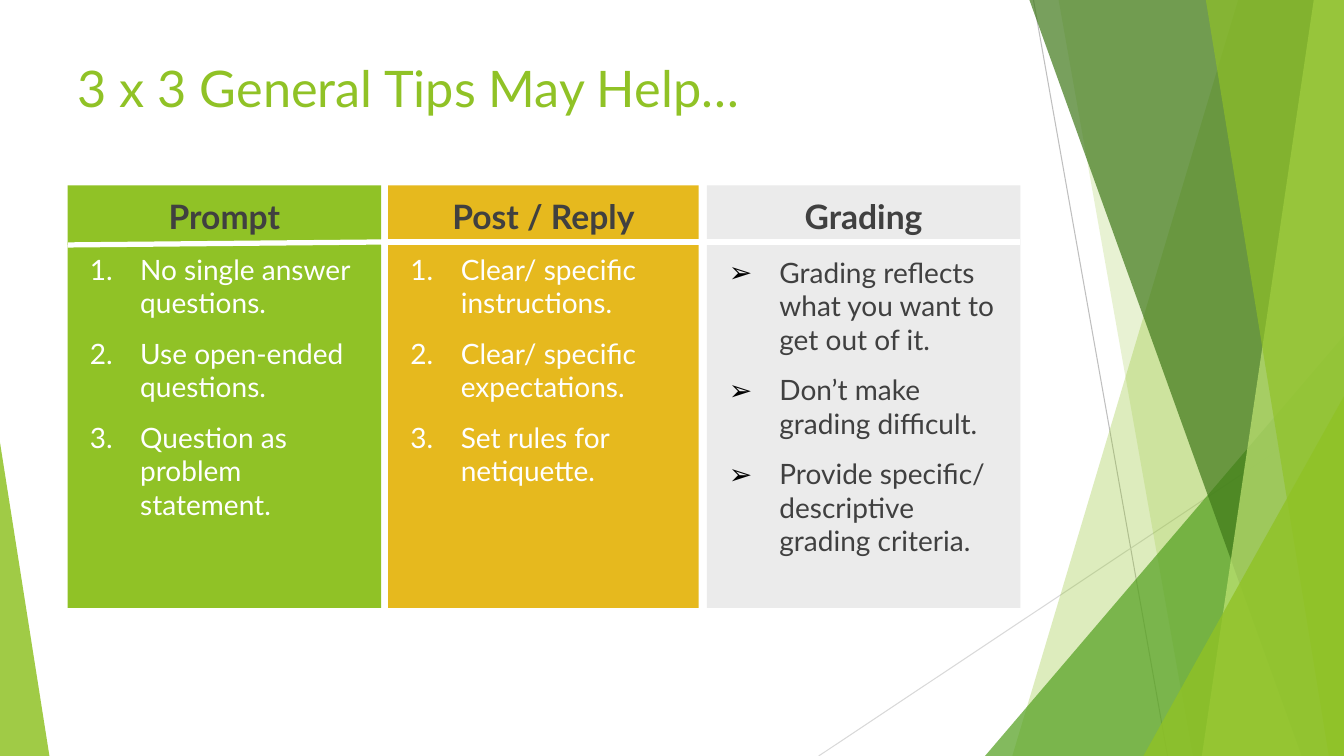
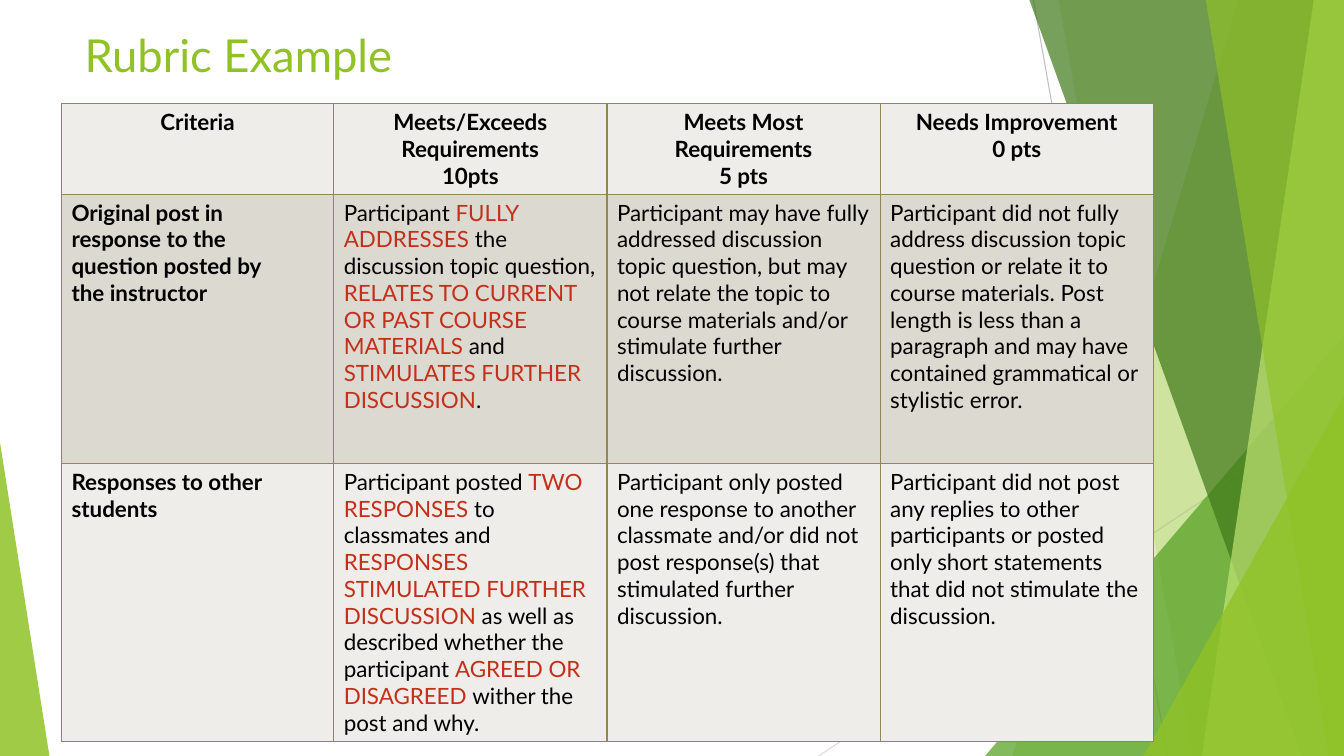
"""Build two slides: general discussion tips and a rubric example."""
from dataclasses import dataclass

from lxml.etree import SubElement
from pptx import Presentation
from pptx.dml.color import RGBColor
from pptx.enum.shapes import MSO_CONNECTOR as Connector, MSO_SHAPE as Preset
from pptx.enum.text import MSO_ANCHOR as Anchor, MSO_AUTO_SIZE as AutoSize, PP_ALIGN as Align
from pptx.oxml.ns import qn
from pptx.util import Inches, Pt

FONT = "Lato"
WIDTH, HEIGHT = 13.33, 7.5
COLORS = {
    "lime": "90C226", "leaf": "54A021", "forest": "3F7819", "pale": "C0E474",
    "gold": "E6B91E", "mist": "EBEBEB", "ink": "404040", "black": "000000",
    "white": "FFFFFF", "silver": "BFBFBF", "cloud": "D9D9D9", "red": "C42F1A",
    "light_row": "EEEDE9", "dark_row": "DCD9D1", "border": "918655",
}


@dataclass(frozen=True)
class Rule:
    start: tuple[float, float]
    end: tuple[float, float]
    color: str
    points: float


@dataclass(frozen=True)
class Band:
    top_x: float
    bottom_x: float
    color: str
    opacity: int


@dataclass(frozen=True)
class Wedge:
    left: float
    top: float
    width: float
    apex: float
    color: str
    opacity: int


@dataclass(frozen=True)
class Column:
    left: float
    width: float
    list_top: float
    heading: str
    fill: str
    text: str
    bullet: str
    bullet_color: str
    tips: tuple[str, ...]


BACKDROP_RULES = (
    Rule((10.25, 0), (11.58, HEIGHT), "silver", 0.75),
    Rule((WIDTH, 4.03), (8.12, HEIGHT), "cloud", 0.75),
)
BACKDROP_FACETS = (
    Band(12.28, 10.04, "lime", 30),
    Band(10.5, 11.83, "lime", 20),
    Wedge(9.77, 3.33, 3.56, 1, "leaf", 72),
    Band(10.21, 12.91, "forest", 70),
    Band(13.03, 11.92, "pale", 70),
    Band(11.96, 13.18, "lime", 65),
    Wedge(11.34, 3.93, 1.99, 1, "lime", 80),
    Wedge(0, 4.39, 0.49, 0, "lime", 85),
)
COLUMNS = (
    Column(0.67, 3.11, 2.4, "Prompt", "lime", "white", "", "white", (
        "No single answer questions.",
        "Use open-ended questions.",
        "Question as problem statement.")),
    Column(3.85, 3.08, 2.4, "Post / Reply", "gold", "white", "", "white", (
        "Clear/ specific instructions.",
        "Clear/ specific expectations.",
        "Set rules for netiquette.")),
    Column(7.01, 3.11, 2.43, "Grading", "mist", "ink", "➢", "black", (
        "Grading reflects what you want to get out of it.",
        "Don’t make grading difficult.",
        "Provide specific/ descriptive grading criteria.")),
)
HEADING_TOP, HEADING_HEIGHT, LIST_BOTTOM = 1.84, 0.59, 6.03
DIVIDERS = (
    Rule((0.67, 2.43), (3.85, 2.4), "white", 3.75),
    Rule((3.78, 2.4), (7.19, 2.4), "white", 3.75),
    Rule((7.19, 2.4), (10.12, 2.4), "white", 3.75),
)
RUBRIC_WIDTHS = (2.7, 2.71, 2.71, 2.71)
RUBRIC_HEIGHTS = (0.89, 2.67, 2.76)
RUBRIC = (
    (("Criteria",),
     ("Meets/Exceeds Requirements\n10pts",),
     ("Meets Most Requirements\n5 pts",),
     ("Needs Improvement\n0 pts",)),
    (("Original post in\nresponse to the\nquestion posted by\nthe instructor",),
     ("Participant ", "FULLY ADDRESSES ", "the discussion topic question, ",
      "RELATES TO CURRENT OR PAST COURSE MATERIALS ", "and ",
      "STIMULATES FURTHER DISCUSSION", "."),
     ("Participant may have fully addressed discussion topic question, but may not "
      "relate the topic to course materials and/or stimulate further discussion.",),
     ("Participant did not fully address discussion topic question or relate it to "
      "course materials. Post length is less than a paragraph and may have contained "
      "grammatical or stylistic error.",)),
    (("Responses to other students",),
     ("Participant posted ", "TWO RESPONSES ", "to classmates and ",
      "RESPONSES STIMULATED FURTHER DISCUSSION ",
      "as well as described whether the participant ", "AGREED OR DISAGREED ",
      "wither the post and why."),
     ("Participant only posted one response to another classmate and/or did not post "
      "response(s) that stimulated further discussion.",),
     ("Participant did not post any replies to other participants or posted only short "
      "statements that did not stimulate the discussion.",)),
)


def rgb(name: str) -> RGBColor:
    return RGBColor.from_string(COLORS[name])


def format_span(span, size: float, color: str, bold: bool = False) -> None:
    span.font.name = FONT
    span.font.size = Pt(size)
    span.font.bold = bold
    span.font.color.rgb = rgb(color)


def place(shape, left: float, top: float, width: float, height: float) -> None:
    shape.left, shape.top = Inches(left), Inches(top)
    shape.width, shape.height = Inches(width), Inches(height)


def paint(shape, color: str, opacity: int = 100) -> None:
    shape.fill.solid()
    shape.fill.fore_color.rgb = rgb(color)
    shape.line.fill.background()
    if opacity < 100:
        tint = shape.element.spPr.find(f"{qn('a:solidFill')}/{qn('a:srgbClr')}")
        SubElement(tint, qn("a:alpha"), val=str(opacity * 1000))


def write(shape, text: str, size: float, color: str, *, inset: float = 0.1,
          bold: bool = False, align: Align = Align.LEFT) -> None:
    frame = shape.text_frame
    frame.text = text
    frame.word_wrap = True
    frame.auto_size = AutoSize.NONE
    frame.vertical_anchor = Anchor.TOP
    frame.margin_left = frame.margin_right = Inches(0.1)
    frame.margin_top = frame.margin_bottom = Inches(inset)
    for para in frame.paragraphs:
        para.alignment = align
        para.space_before = Pt(0)
        for span in para.runs:
            format_span(span, size, color, bold)


def add_rule(page, rule: Rule):
    points = [Inches(value) for value in (*rule.start, *rule.end)]
    line = page.shapes.add_connector(Connector.STRAIGHT, *points)
    line.line.color.rgb = rgb(rule.color)
    line.line.width = Pt(rule.points)
    SubElement(line.element.spPr, qn("a:effectLst"))
    return line


def add_facet(page, facet: Band | Wedge):
    if isinstance(facet, Band):
        outline = page.shapes.build_freeform(Inches(facet.top_x), 0)
        corners = ((WIDTH, 0), (WIDTH, HEIGHT), (facet.bottom_x, HEIGHT))
        outline.add_line_segments([(Inches(x), Inches(y)) for x, y in corners])
        shape = outline.convert_to_shape()
    else:
        shape = page.shapes.add_shape(
            Preset.ISOSCELES_TRIANGLE, Inches(facet.left), Inches(facet.top),
            Inches(facet.width), Inches(HEIGHT - facet.top))
        shape.adjustments[0] = facet.apex
    shape.shadow.inherit = False
    paint(shape, facet.color, facet.opacity)
    return shape


def build_backdrop(deck, page) -> None:
    shapes = [add_rule(page, rule) for rule in BACKDROP_RULES]
    shapes += [add_facet(page, facet) for facet in BACKDROP_FACETS]
    for number, shape in enumerate(shapes, start=100):
        shape.element.xpath("./*/p:cNvPr")[0].set("id", str(number))
        deck.slide_master.shapes.element.append(shape.element)


def add_bullet(para, mark: str, color: str) -> None:
    para.space_after = Pt(12)
    props = para._p.get_or_add_pPr()
    props.set("marL", str(Inches(0.62)))
    props.set("indent", str(Inches(-0.5)))
    SubElement(SubElement(props, qn("a:buClr")), qn("a:srgbClr"), val=COLORS[color])
    SubElement(props, qn("a:buFont"), typeface=FONT)
    if mark:
        SubElement(props, qn("a:buChar"), char=mark)
    else:
        SubElement(props, qn("a:buAutoNum"), type="arabicPeriod")


def add_column(page, column: Column, body) -> None:
    place(body, column.left, column.list_top, column.width, LIST_BOTTOM - column.list_top)
    paint(body, column.fill)
    write(body, "\n".join(column.tips), 20, column.text)
    for para in body.text_frame.paragraphs:
        add_bullet(para, column.bullet, column.bullet_color)
    box = page.shapes.add_shape(
        Preset.RECTANGLE, Inches(column.left), Inches(HEADING_TOP),
        Inches(column.width), Inches(HEADING_HEIGHT))
    box.shadow.inherit = False
    paint(box, column.fill)
    write(box, column.heading, 24, "ink", bold=True, align=Align.CENTER)


def build_tips(page) -> None:
    title = page.shapes.title
    place(title, 0.67, 0.47, 9.91, 1.07)
    write(title, "3 x 3 General Tips May Help…", 36, "lime")
    *bodies, spare = [item for item in page.placeholders if item.placeholder_format.idx]
    spare.element.getparent().remove(spare.element)
    for column, body in zip(COLUMNS, bodies):
        add_column(page, column, body)
    for rule in DIVIDERS:
        add_rule(page, rule)


def fill_cell(cell, parts: tuple[str, ...], heading: bool, bold: bool, fill: str) -> None:
    cell.fill.solid()
    cell.fill.fore_color.rgb = rgb(fill)
    frame = cell.text_frame
    frame.text = parts[0]
    for part in parts[1:]:
        frame.paragraphs[0].add_run().text = part
    for para in frame.paragraphs:
        para.alignment = Align.CENTER if heading else Align.LEFT
        for index, span in enumerate(para.runs):
            format_span(span, 16, "red" if index % 2 else "black", bold)
    props = cell._tc.get_or_add_tcPr()
    for index, side in enumerate(("lnL", "lnR", "lnT", "lnB")):
        edge = props.makeelement(qn(f"a:{side}"), {"w": str(Pt(1))})
        props.insert(index, edge)
        SubElement(SubElement(edge, qn("a:solidFill")), qn("a:srgbClr"), val=COLORS["border"])


def build_rubric(page) -> None:
    title = page.shapes.title
    place(title, 0.74, 0.22, 9.4, 0.64)
    write(title, "Rubric Example", 32.4, "lime", inset=0.05)
    table = page.shapes.add_table(
        len(RUBRIC), len(RUBRIC_WIDTHS), Inches(0.61), Inches(1.03),
        Inches(sum(RUBRIC_WIDTHS)), Inches(sum(RUBRIC_HEIGHTS))).table
    table.first_row = table.horz_banding = False
    for column, width in zip(table.columns, RUBRIC_WIDTHS):
        column.width = Inches(width)
    for y, (row, height) in enumerate(zip(RUBRIC, RUBRIC_HEIGHTS)):
        table.rows[y].height = Inches(height)
        for x, parts in enumerate(row):
            fill_cell(table.cell(y, x), parts, y == 0, y == 0 or x == 0,
                      "dark_row" if y % 2 else "light_row")


def main() -> None:
    deck = Presentation()
    deck.slide_width, deck.slide_height = Inches(WIDTH), Inches(HEIGHT)
    tips = deck.slides.add_slide(deck.slide_layouts.get_by_name("Comparison"))
    build_backdrop(deck, tips)
    build_tips(tips)
    build_rubric(deck.slides.add_slide(deck.slide_layouts.get_by_name("Title Only")))
    deck.save("out.pptx")


if __name__ == "__main__":
    main()
